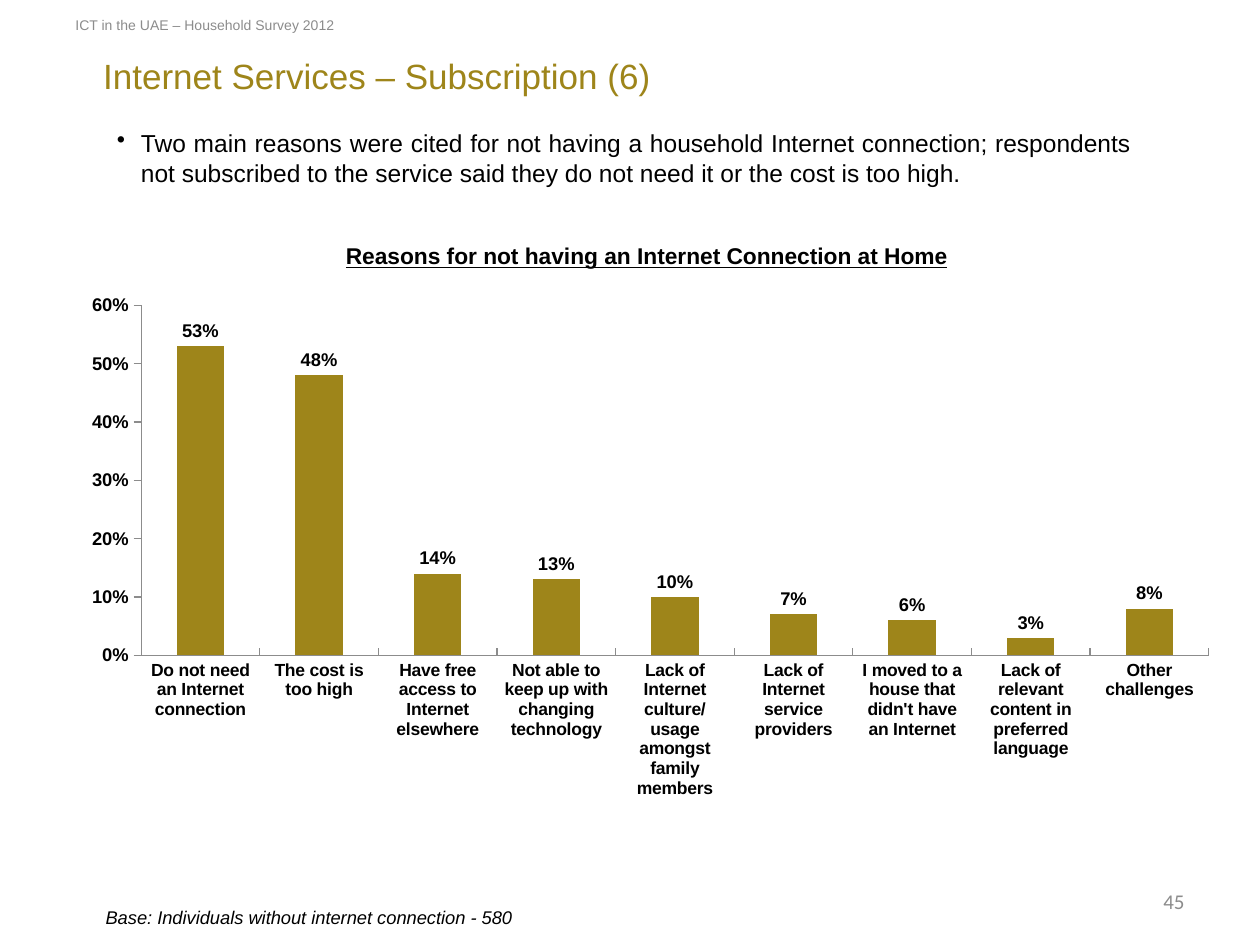
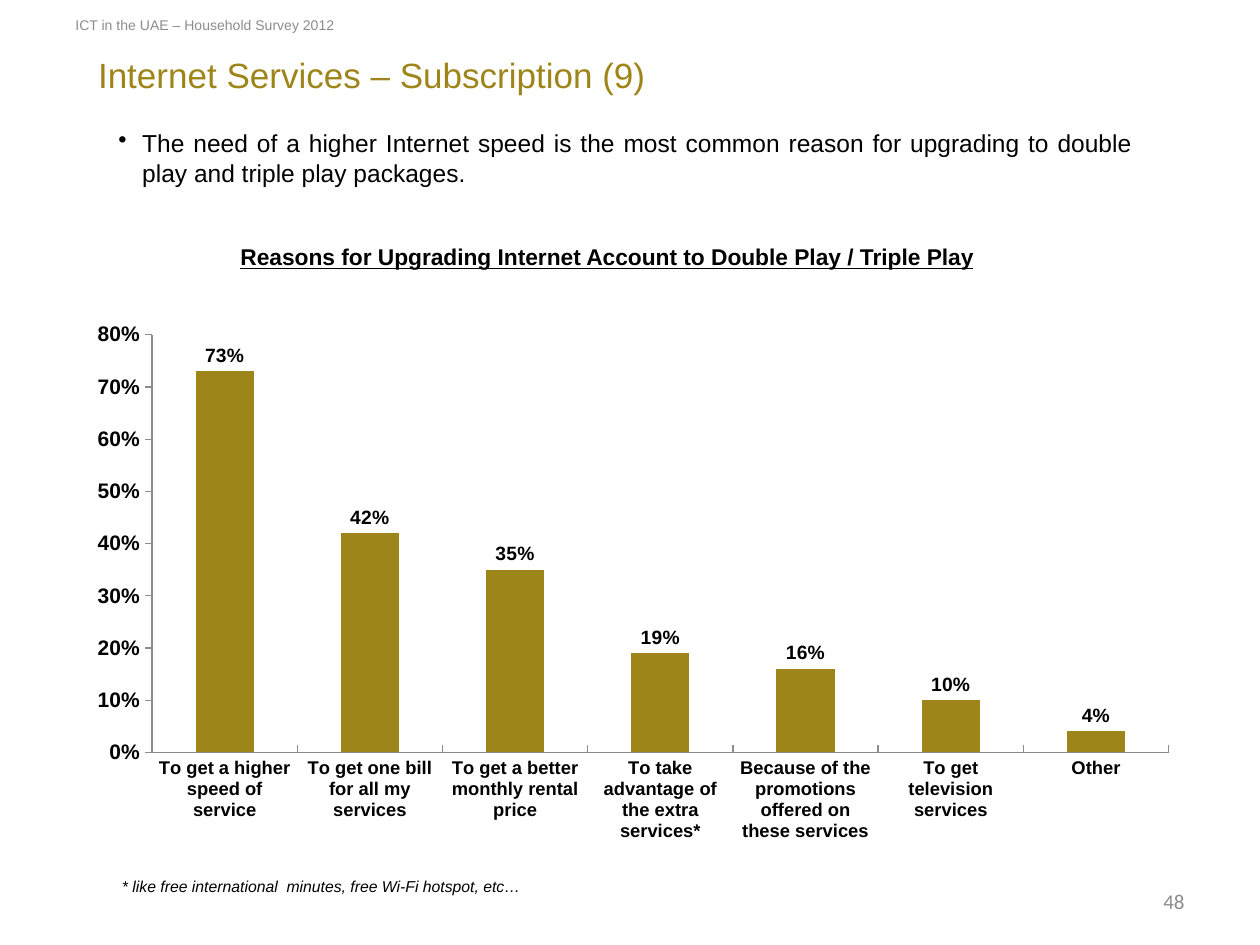
"""Builds two survey slides on reasons for Internet subscription choices."""
import lxml.etree
import pptx
import pptx.chart.data
import pptx.dml.color
import pptx.enum.chart
import pptx.enum.text
import pptx.oxml
import pptx.oxml.ns
import pptx.util

Inches = pptx.util.Inches
Pt = pptx.util.Pt
ALIGN = pptx.enum.text.PP_ALIGN
ANCHOR = pptx.enum.text.MSO_ANCHOR
TICK = pptx.enum.chart.XL_TICK_MARK
GOLD = pptx.dml.color.RGBColor(0x9E, 0x85, 0x1A)
GREY = pptx.dml.color.RGBColor(0x8C, 0x8C, 0x8C)
BLACK = pptx.dml.color.RGBColor(0, 0, 0)
WHITE = pptx.dml.color.RGBColor(0xFF, 0xFF, 0xFF)


class SurveyDeck:
    def __init__(self):
        self.deck = pptx.Presentation()
        self.deck.slide_width = Inches(10)
        self.deck.slide_height = Inches(7.5)
        self.slide = None

    def style(self, font, size, color=BLACK, face="Arial", **traits):
        font.name, font.size, font.color.rgb = face, Pt(size), color
        for trait, value in traits.items():
            setattr(font, trait, value)

    def text(self, words, box, size, align=ALIGN.LEFT, anchor=ANCHOR.TOP, bullet=False, **look):
        frame = self.slide.shapes.add_textbox(*map(Inches, box)).text_frame
        frame.word_wrap = True
        frame.vertical_anchor = anchor
        paragraph = frame.paragraphs[0]
        paragraph.alignment = align
        if bullet:
            properties = paragraph._p.get_or_add_pPr()
            properties.set("marL", str(Inches(0.19)))
            properties.set("indent", str(-Inches(0.19)))
            mark = lxml.etree.SubElement(properties, pptx.oxml.ns.qn("a:buChar"))
            mark.set("char", "•")
        run = paragraph.add_run()
        run.text = words
        self.style(run.font, size, **look)

    def start(self, title, title_corner, number):
        self.slide = self.deck.slides.add_slide(self.deck.slide_layouts[6])
        self.slide.background.fill.solid()
        self.slide.background.fill.fore_color.rgb = WHITE
        self.text(title, (*title_corner, 8.09, 0.5), 20, anchor=ANCHOR.MIDDLE, color=GOLD)
        self.text("ICT in the UAE – Household Survey 2012", (0.5, 0, 5.25, 0.4), 8,
                  anchor=ANCHOR.MIDDLE, color=GREY)
        self.text(str(number), (7.17, 6.95, 2.33, 0.4), 12, ALIGN.RIGHT, ANCHOR.MIDDLE,
                  color=GREY, face="Calibri")

    def finding(self, words, left):
        self.text(words, (left, 0.97, 8.25, 0.57), 14, ALIGN.JUSTIFY, bullet=True)

    def heading(self, words, box):
        self.text(words, box, 13, ALIGN.CENTER, bold=True, underline=True)

    def note(self, words, box, size):
        self.text(words, box, size, italic=True)

    def columns(self, reasons, box, plot_area, top, sizes):
        category_size, value_size, label_size = sizes
        data = pptx.chart.data.CategoryChartData(number_format="0%")
        data.categories = list(reasons)
        data.add_series("Series 1", [percent / 100 for percent in reasons.values()])
        chart = self.slide.shapes.add_chart(
            pptx.enum.chart.XL_CHART_TYPE.COLUMN_CLUSTERED, *map(Inches, box), data).chart
        chart.has_legend = chart.has_title = False
        self.style(chart.font, category_size)

        for axis, size, tick in ((chart.category_axis, category_size, TICK.INSIDE),
                                 (chart.value_axis, value_size, TICK.OUTSIDE)):
            axis.has_major_gridlines = False
            axis.major_tick_mark, axis.minor_tick_mark = tick, TICK.NONE
            axis.format.line.color.rgb = GREY
            axis.format.line.width = Pt(0.75)
            self.style(axis.tick_labels.font, size, bold=True)
        scale = chart.value_axis
        scale.minimum_scale, scale.maximum_scale, scale.major_unit = 0, top, 0.1
        scale.tick_labels.number_format = "0%"
        scale.tick_labels.number_format_is_linked = False

        plot = chart.plots[0]
        plot.gap_width, plot.vary_by_categories = 150, False
        bars = plot.series[0].format.fill
        bars.solid()
        bars.fore_color.rgb = GOLD
        plot.has_data_labels = True
        labels = plot.data_labels
        labels.show_value = True
        labels.number_format, labels.number_format_is_linked = "0%", False
        labels.position = pptx.enum.chart.XL_LABEL_POSITION.OUTSIDE_END
        self.style(labels.font, label_size, bold=True)
        self.place_plot(chart, plot_area)

    def place_plot(self, chart, plot_area):
        area = chart._chartSpace.chart.plotArea
        for layout in area.findall(pptx.oxml.ns.qn("c:layout")):
            area.remove(layout)
        settings = [("layoutTarget", "inner"), ("xMode", "edge"), ("yMode", "edge"),
                    *zip("xywh", plot_area)]
        tags = "".join(f'<c:{tag} val="{value}"/>' for tag, value in settings)
        area.insert(0, pptx.oxml.parse_xml(
            f'<c:layout {pptx.oxml.ns.nsdecls("c")}><c:manualLayout>{tags}'
            '</c:manualLayout></c:layout>'))


NO_CONNECTION = {
    "Do not need an Internet connection": 53,
    "The cost is too high": 48,
    "Have free access to Internet elsewhere": 14,
    "Not able to keep up with changing technology": 13,
    "Lack of Internet culture/ usage amongst family members": 10,
    "Lack of Internet service providers": 7,
    "I moved to a house that didn't have an Internet": 6,
    "Lack of relevant content in preferred language": 3,
    "Other challenges": 8,
}
UPGRADE = {
    "To get a higher speed of service": 73,
    "To get one bill for all my services": 42,
    "To get a better monthly rental price": 35,
    "To take advantage of the extra services*": 19,
    "Because of the promotions offered on these services": 16,
    "To get television services": 10,
    "Other": 4,
}


def main():
    survey = SurveyDeck()

    survey.start("Internet Services – Subscription (6)", (0.72, 0.35), 45)
    survey.heading("Reasons for not having an Internet Connection at Home", (2.59, 1.87, 5.08, 0.32))
    survey.finding("Two main reasons were cited for not having a household Internet connection; "
                   "respondents not subscribed to the service said they do not need it or "
                   "the cost is too high.", 0.83)
    survey.columns(NO_CONNECTION, (0.56, 2.33, 9.19, 4.46), (0.061, 0.021, 0.922, 0.623),
                   0.6, (10, 10.5, 10.5))
    survey.note("Base: Individuals without internet connection - 580", (0.74, 7.14, 3.73, 0.28), 10.5)

    survey.start("Internet Services – Subscription (9)", (0.68, 0.34), 48)
    survey.heading("Reasons for Upgrading Internet Account to Double Play / Triple Play",
                   (1.04, 1.88, 7.55, 0.32))
    survey.finding("The need of a higher Internet speed is the most common reason for upgrading "
                   "to double play and triple play packages.", 0.84)
    survey.columns(UPGRADE, (0.63, 2.53, 8.75, 4.71), (0.066, 0.027, 0.922, 0.704),
                   0.8, (10.5, 12, 11))
    survey.note("* like free international  minutes, free Wi-Fi hotspot, etc…",
                (0.87, 6.91, 7.6, 0.25), 9)

    survey.deck.save("out.pptx")


if __name__ == "__main__":
    main()
